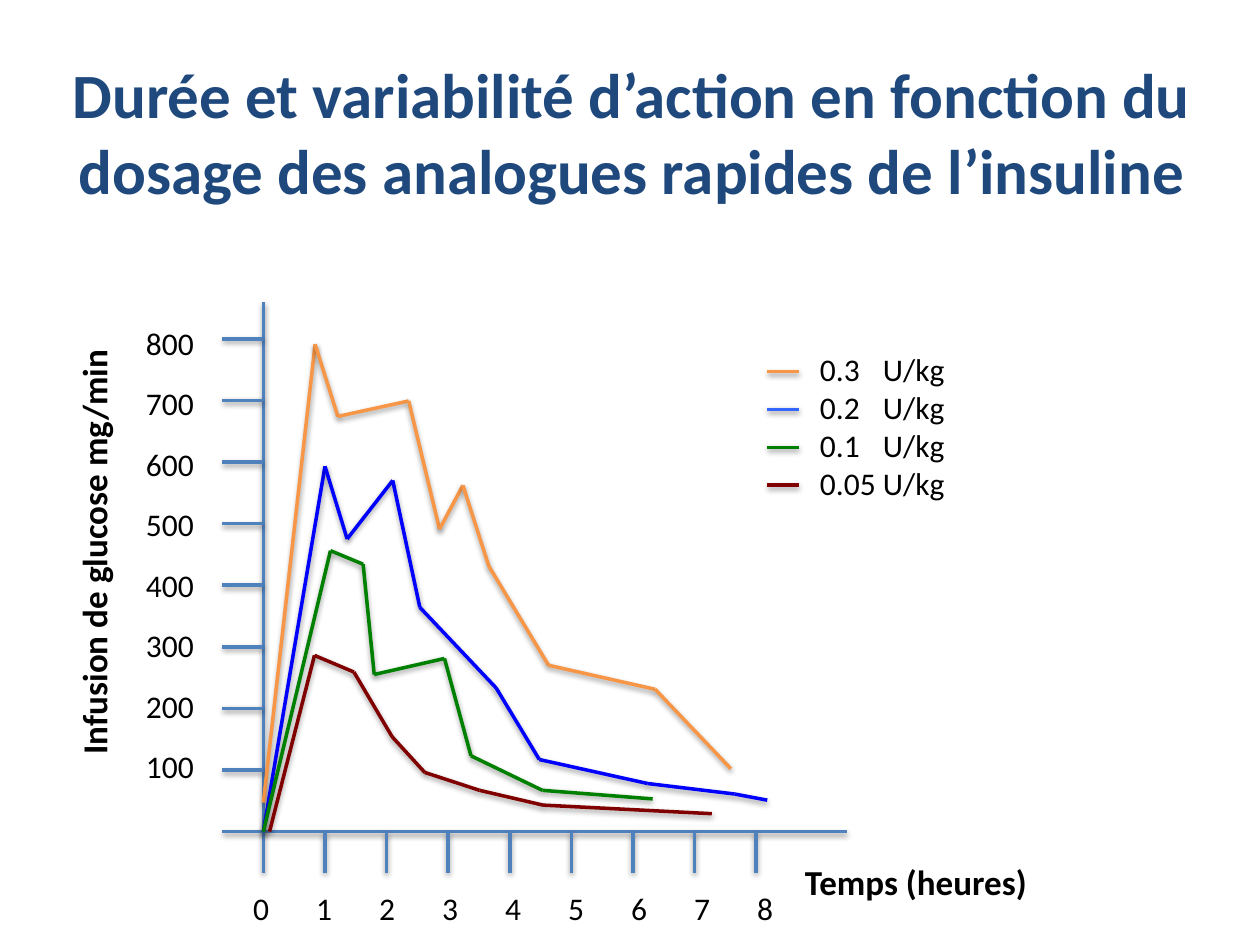
"""Build the slide on insulin analogue action by dose."""
from itertools import pairwise

from pptx import Presentation
from pptx.dml.color import RGBColor
from pptx.enum.shapes import MSO_CONNECTOR
from pptx.enum.text import MSO_ANCHOR, PP_ALIGN
from pptx.util import Pt

STRAIGHT = MSO_CONNECTOR.STRAIGHT
MIDDLE = MSO_ANCHOR.MIDDLE
CENTER = PP_ALIGN.CENTER

NAVY = RGBColor(0x1F, 0x49, 0x7D)
AXIS_BLUE = RGBColor(0x4F, 0x81, 0xBD)
ORANGE = RGBColor(0xF7, 0x96, 0x46)
BLUE = RGBColor(0x00, 0x00, 0xFF)
KEY_BLUE = RGBColor(0x33, 0x66, 0xFF)
GREEN = RGBColor(0x00, 0x80, 0x00)
MAROON = RGBColor(0x80, 0x00, 0x00)
BLACK = RGBColor(0x00, 0x00, 0x00)
FONT = "Calibri"

TITLE = ("Durée et variabilité d’action en fonction du "
         "dosage des analogues rapides de l’insuline")
X_TITLE = "Temps (heures)"
Y_TITLE = "Infusion de glucose mg/min"
HOURS = range(9)
RATES = range(800, 0, -100)

CURVES = [
    ("0.3", ORANGE, ORANGE,
     [(0, 47), (0.84, 791), (1.21, 674), (2.36, 699), (2.86, 491),
      (3.24, 562), (3.66, 431), (4.63, 270), (6.36, 231), (7.59, 102)]),
    ("0.2", BLUE, KEY_BLUE,
     [(0, 0), (1, 593), (1.36, 475), (2.1, 570), (2.54, 364),
      (3.78, 233), (4.48, 117), (6.24, 78), (7.65, 61), (8.18, 51)]),
    ("0.1", GREEN, GREEN,
     [(0, 0), (1.09, 456), (1.62, 434), (1.8, 255), (2.94, 281),
      (3.37, 123), (4.53, 67), (6.32, 53)]),
    ("0.05", MAROON, MAROON,
     [(0.1, 0), (0.83, 286), (1.47, 259), (2.09, 154), (2.62, 96),
      (3.51, 67), (4.54, 43), (7.28, 29)]),
]

ORIGIN_X, ORIGIN_Y = 150.5, 475.2
UNIT = 35.2
TICK = 23.4
AXIS_TOP, AXIS_RIGHT = 172.8, 483.8
KEY_LEFT, KEY_RIGHT, KEY_TOP, KEY_STEP = 438.5, 456.5, 212.4, 21.6


def place(hour, rate):
    """Return the slide position of a data point."""
    return ORIGIN_X + hour * UNIT, ORIGIN_Y - rate / 100 * UNIT


def add_line(slide, start, end, color):
    """Draw a straight line between two positions."""
    line = slide.shapes.add_connector(
        STRAIGHT, *(Pt(value) for value in (*start, *end)))
    line.line.color.rgb = color
    line.line.width = Pt(2)


def set_font(para, size, color=BLACK, bold=False):
    """Format a whole paragraph."""
    para.font.name = FONT
    para.font.size = Pt(size)
    para.font.bold = bold
    para.font.color.rgb = color


def add_text(slide, area, lines, size=18, bold=False, wrap=False, spacing=None):
    """Add a text box with one paragraph for each line."""
    box = slide.shapes.add_textbox(*(Pt(value) for value in area))
    frame = box.text_frame
    frame.word_wrap = wrap
    frame.text = "\n".join(lines)
    for para in frame.paragraphs:
        set_font(para, size, bold=bold)
        para.line_spacing = spacing
    return box


def add_axes(slide):
    """Draw both axes with their ticks, labels and titles."""
    add_line(slide, (ORIGIN_X, AXIS_TOP), (ORIGIN_X, ORIGIN_Y), AXIS_BLUE)
    add_line(slide, (AXIS_RIGHT, ORIGIN_Y), (ORIGIN_X, ORIGIN_Y), AXIS_BLUE)
    for hour in HOURS:
        x, y = place(hour, 0)
        add_line(slide, (x, y), (x, y + TICK), AXIS_BLUE)
    for rate in (*RATES, 0):
        x, y = place(0, rate)
        add_line(slide, (x - TICK, y), (x, y), AXIS_BLUE)
    add_text(slide, (137.5, 504.7, 426.2, 29), ["\t".join(map(str, HOURS))],
             wrap=True)
    add_text(slide, (76.3, 168.5, 42.5, 284.4), map(str, RATES), spacing=1.6)
    y_title = add_text(slide, (-69.8, 298.8, 247, 31.7), [Y_TITLE], 20, True)
    y_title.rotation = 270
    add_text(slide, (452.9, 488.2, 144.7, 31.7), [X_TITLE], 20, True)


def add_curves(slide):
    """Draw each dose curve and its legend entry."""
    for row, (_, color, key_color, points) in enumerate(CURVES):
        for start, end in pairwise(points):
            add_line(slide, place(*start), place(*end), color)
        y = KEY_TOP + row * KEY_STEP
        add_line(slide, (KEY_LEFT, y), (KEY_RIGHT, y), key_color)
    add_text(slide, (461.5, 196.6, 95.8, 94.3),
             [f"{dose}\tU/kg" for dose, *_ in CURVES], wrap=True)


def main():
    deck = Presentation()
    deck.slide_width, deck.slide_height = Pt(720), Pt(540)
    slide = deck.slides.add_slide(deck.slide_layouts[5])
    title = slide.shapes.title
    title.left, title.top, title.width, title.height = (
        Pt(value) for value in (25.9, 30.2, 670.3, 90))
    title.text_frame.text = TITLE
    title.text_frame.vertical_anchor = MIDDLE
    para = title.text_frame.paragraphs[0]
    para.alignment = CENTER
    set_font(para, 36, NAVY, True)
    add_axes(slide)
    add_curves(slide)
    deck.save("out.pptx")


if __name__ == "__main__":
    main()
